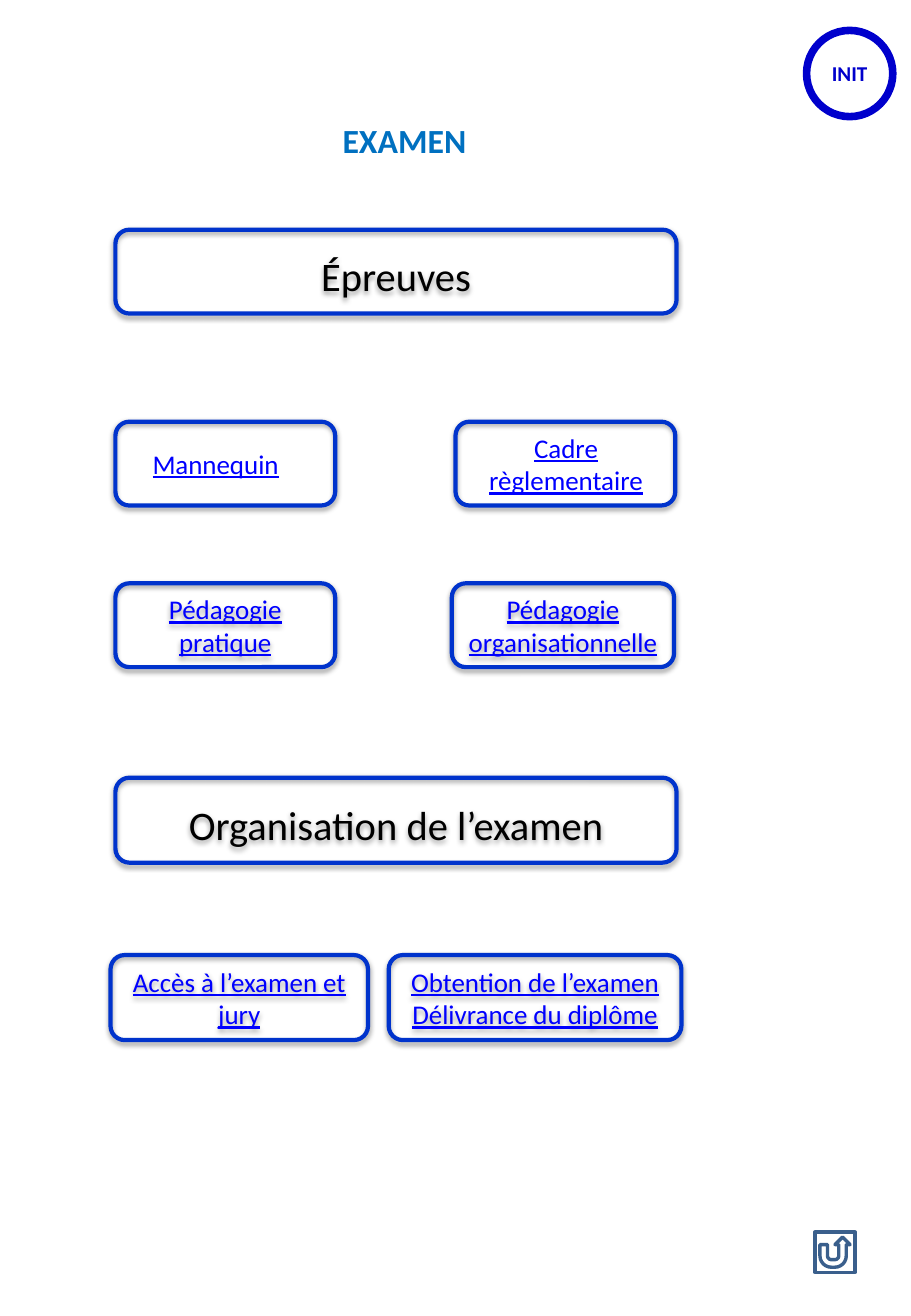
import pptx
import pptx.util
import pptx.dml.color
import pptx.enum.shapes
import pptx.enum.text
import pptx.oxml
import pptx.oxml.ns

Inches = pptx.util.Inches
Pt = pptx.util.Pt
PRESET = pptx.enum.shapes.MSO_SHAPE
COLORS = {
    "white": "FFFFFF", "badge": "0000CC", "button": "3A5F8C", "title": "0070C0",
    "frame": "0033CC", "heading": "000000", "link": "0000FF",
}
SHADOW_XML = (
    '<a:outerShdw {} blurRad="40000" dist="20000" dir="5400000" rotWithShape="0">'
    '<a:srgbClr val="000000"><a:alpha val="38000"/></a:srgbClr></a:outerShdw>'
).format(pptx.oxml.ns.nsdecls("a"))


def rgb(name):
    """Return the named colour."""
    return pptx.dml.color.RGBColor.from_string(COLORS[name])


def write(shape, lines, size, color, bold=False, underline=False, spacing=None, after=0):
    """Write centred paragraphs into a shape."""
    frame = shape.text_frame
    for index, line in enumerate(lines):
        paragraph = frame.add_paragraph() if index else frame.paragraphs[0]
        paragraph.alignment = pptx.enum.text.PP_ALIGN.CENTER
        paragraph.space_after = Pt(after)
        if spacing:
            paragraph.line_spacing = spacing
        run = paragraph.add_run()
        run.text = line
        run.font.name = "Calibri"
        run.font.size = Pt(size)
        run.font.bold = bold
        run.font.underline = underline
        run.font.color.rgb = rgb(color)


def add_outline(slide, preset, box, color, width, fill=None):
    """Add an outlined preset shape without shadow."""
    shape = slide.shapes.add_shape(preset, *map(Inches, box))
    if fill:
        shape.fill.solid()
        shape.fill.fore_color.rgb = rgb(fill)
    else:
        shape.fill.background()
    shape.line.color.rgb = rgb(color)
    shape.line.width = Pt(width)
    shape.shadow.inherit = False
    shape.text_frame.word_wrap = True
    shape.text_frame.vertical_anchor = pptx.enum.text.MSO_ANCHOR.MIDDLE
    return shape


def add_frame(slide, box):
    """Add a rounded frame with a soft shadow below it."""
    shape = add_outline(slide, PRESET.ROUNDED_RECTANGLE, box, "frame", 2.5)
    shape.text_frame.margin_left = shape.text_frame.margin_right = Inches(0.08)
    effects = shape._element.spPr.find(pptx.oxml.ns.qn("a:effectLst"))
    effects.append(pptx.oxml.parse_xml(SHADOW_XML))
    return shape


def add_label(slide, box, wrap=True):
    """Add a text box that grows with its text."""
    label = slide.shapes.add_textbox(*map(Inches, box))
    label.text_frame.word_wrap = wrap
    label.text_frame.auto_size = pptx.enum.text.MSO_AUTO_SIZE.SHAPE_TO_FIT_TEXT
    return label


def add_heading(slide, box, text):
    """Add a framed section heading."""
    write(add_frame(slide, box), [text], 24, "heading", spacing=1.15, after=10)


def add_link(slide, box, lines, after=10):
    """Add a framed entry with underlined text."""
    write(add_frame(slide, box), lines, 16, "link", underline=True, after=after)


def add_captioned_link(slide, box, text, caption, wrap=True):
    """Add a frame with its text in a box offset from the frame."""
    left, top, width, height = box
    add_frame(slide, box)
    shift_x, shift_y, label_width, label_height = caption
    label = add_label(slide, (left + shift_x, top + shift_y, label_width, label_height), wrap)
    write(label, [text], 16, "link", underline=True, after=10)


def add_navigation(slide):
    """Add the badge and the return button."""
    badge = add_outline(slide, PRESET.OVAL, (6.64, 0.25, 0.71, 0.71), "badge", 4.5, "white")
    badge.text_frame.margin_left = badge.text_frame.margin_right = 0
    write(badge, ["INIT"], 12.5, "badge", bold=True)
    add_outline(slide, PRESET.ACTION_BUTTON_RETURN, (6.71, 10.14, 0.33, 0.33), "button", 2)


def add_tests(slide, left, top):
    """Add the section on the tests."""
    add_heading(slide, (left, top, 4.62, 0.69), "Épreuves")
    first, second = top + 1.58, top + 2.91
    add_captioned_link(slide, (left, first, 1.81, 0.69), "Mannequin",
                       (0.2, 0.16, 1.25, 0.37), wrap=False)
    add_captioned_link(slide, (left + 2.8, first, 1.81, 0.69), "Cadre règlementaire",
                       (-0.08, 0.03, 1.98, 0.64))
    add_link(slide, (left, second, 1.81, 0.69), ["Pédagogie pratique"])
    add_link(slide, (left + 2.77, second, 1.83, 0.69), ["Pédagogie organisationnelle"])


def add_organisation(slide, left, top):
    """Add the section on how the exam is organised."""
    add_heading(slide, (left, top, 4.62, 0.7), "Organisation de l’examen")
    row = top + 1.46
    add_link(slide, (left - 0.04, row, 2.12, 0.7), ["Accès à l’examen et jury"])
    add_link(slide, (left + 2.25, row, 2.41, 0.7),
             ["Obtention de l’examen", "Délivrance du diplôme"], after=0)


def main():
    """Build and save the slide."""
    presentation = pptx.Presentation()
    presentation.slide_width = Inches(7.5)
    presentation.slide_height = Inches(10.83)
    slide = presentation.slides.add_slide(presentation.slide_layouts[6])
    add_navigation(slide)
    write(add_label(slide, (0.22, 0.94, 6.22, 0.44)), ["EXAMEN"], 20, "title", bold=True)
    add_tests(slide, 0.95, 1.89)
    add_organisation(slide, 0.95, 6.4)
    presentation.save("out.pptx")


if __name__ == "__main__":
    main()
